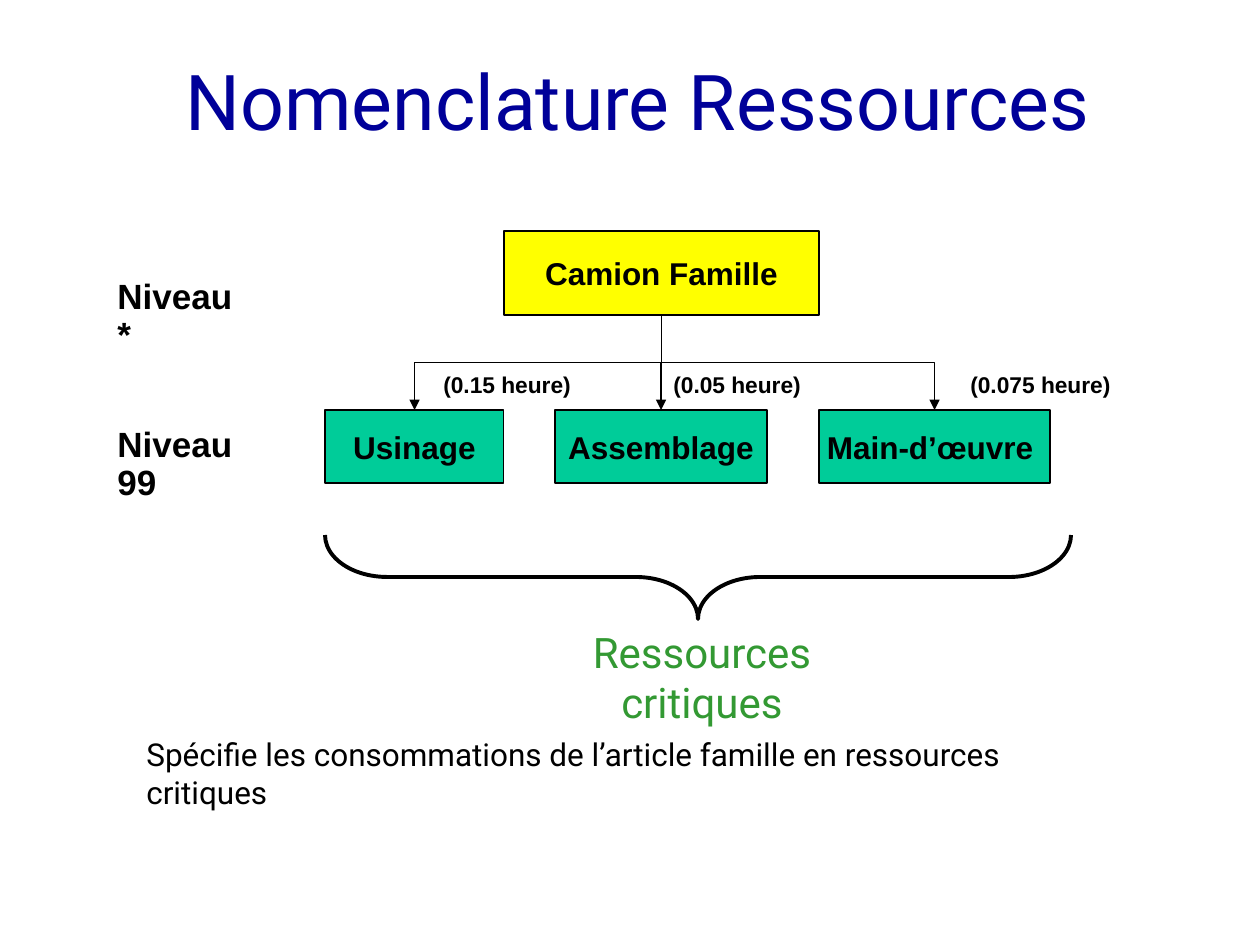
from lxml import etree
from pptx import Presentation
from pptx.dml.color import RGBColor
from pptx.enum.shapes import MSO_CONNECTOR as CONN, MSO_SHAPE as SHAPE
from pptx.enum.text import MSO_ANCHOR as ANCHOR, PP_ALIGN as ALIGN
from pptx.oxml.ns import qn
from pptx.util import Emu, Pt

PX = 914400 // 126

BLACK, NAVY, GREEN = "000000", "000099", "339933"
YELLOW, TEAL = "FFFF00", "00CC99"

TITLE = ("Nomenclature Ressources", (32, 21, 1071, 158))
FAMILY = ("Camion Famille", (504, 231, 315, 84))
RESOURCES = [
    ("Usinage", (325, 410, 179, 73)),
    ("Assemblage", (555, 410, 212, 73)),
    ("Main-d’œuvre ", (819, 410, 231, 73)),
]
LEVELS = [
    ("Niveau *", (105, 273, 155, 90)),
    ("Niveau 99", (105, 421, 175, 90)),
]
HOURS = [
    ("(0.15 heure)", (431, 368, 154, 37)),
    ("(0.05 heure)", (661, 368, 154, 37)),
    ("(0.075 heure)", (958, 368, 166, 37)),
]
CRITICAL = ("Ressources critiques", (502, 620, 400, 115))
NOTE = ("Spécifie les consommations de l’article famille en ressources critiques",
        (134, 729, 985, 90))
BRACE = (656, 204, 84, 746)

LABEL = {"name": "Arial", "bold": True}
LEVEL_FONT = {**LABEL, "size": Pt(20)}
HOUR_FONT = {**LABEL, "size": Pt(13)}
BOX_FONT = {**LABEL, "size": Pt(18)}
TITLE_FONT = {"name": "Roboto", "size": Pt(44), "bold": False}
CRITICAL_FONT = {"name": "Roboto", "size": Pt(24)}
NOTE_FONT = {"name": "Roboto", "size": Pt(18)}


def px(*values):
    return [Emu(int(v * PX)) for v in values]


def rgb(color):
    return RGBColor.from_string(color)


def write(sp, text, font, color=BLACK, align=ALIGN.LEFT, anchor=ANCHOR.TOP,
          spacing=1.0, wrap=True):
    tf = sp.text_frame
    tf.word_wrap, tf.vertical_anchor = wrap, anchor
    p = tf.paragraphs[0]
    p.alignment, p.line_spacing = align, spacing
    r = p.add_run()
    r.text = text
    for key, value in font.items():
        setattr(r.font, key, value)
    r.font.color.rgb = rgb(color)


def add_text(shapes, item, font, **style):
    text, box = item
    write(shapes.add_textbox(*px(*box)), text, font, **style)


def outline(sp, width):
    sp.line.color.rgb = rgb(BLACK)
    sp.line.width = Pt(width)


def add_box(shapes, item, color):
    text, box = item
    sp = shapes.add_shape(SHAPE.RECTANGLE, *px(*box))
    sp.shadow.inherit = False
    sp.fill.solid()
    sp.fill.fore_color.rgb = rgb(color)
    outline(sp, 0.75)
    write(sp, text, BOX_FONT, align=ALIGN.CENTER, anchor=ANCHOR.MIDDLE, wrap=False)


def add_branch(shapes, parent, child):
    x1, y1 = parent[0] + parent[2] / 2, parent[1] + parent[3]
    x2, y2 = child[0] + child[2] / 2, child[1]
    cx, cy = (x1 + x2) / 2, (y1 + y2) / 2
    side = 1 if x2 <= x1 else -1
    half_w, half_h = side * (y2 - y1) / 2, abs(x2 - x1) / 2
    sp = shapes.add_connector(
        CONN.ELBOW, *px(cx - half_w, cy - half_h, cx + half_w, cy + half_h))
    outline(sp, 0.75)
    spPr = sp._element.spPr
    spPr.find(qn("a:xfrm")).set("rot", str(side * 90 * 60000 % 21600000))
    etree.SubElement(spPr.find(qn("a:ln")), qn("a:tailEnd"), type="triangle")
    etree.SubElement(spPr, qn("a:effectLst"))


def main():
    prs = Presentation()
    prs.slide_width, prs.slide_height = px(1260, 945)
    slide = prs.slides.add_slide(prs.slide_layouts[5])
    shapes = slide.shapes

    title, box = TITLE
    sp = shapes.title
    sp.left, sp.top, sp.width, sp.height = px(*box)
    write(sp, title, TITLE_FONT, color=NAVY, align=ALIGN.RIGHT, anchor=ANCHOR.MIDDLE)

    for item in LEVELS:
        add_text(shapes, item, LEVEL_FONT, spacing=0.9)
    for item in HOURS:
        add_text(shapes, item, HOUR_FONT, spacing=0.9, wrap=False)

    add_box(shapes, FAMILY, YELLOW)
    for item in RESOURCES:
        add_box(shapes, item, TEAL)
        add_branch(shapes, FAMILY[1], item[1])

    brace = shapes.add_shape(SHAPE.RIGHT_BRACE, *px(*BRACE))
    brace.shadow.inherit = False
    brace.rotation = 90
    brace.adjustments[0] = 0.74
    brace.fill.background()
    outline(brace, 2.25)

    add_text(shapes, CRITICAL, CRITICAL_FONT, color=GREEN, align=ALIGN.CENTER)
    add_text(shapes, NOTE, NOTE_FONT)
    prs.save("out.pptx")


if __name__ == "__main__":
    main()
